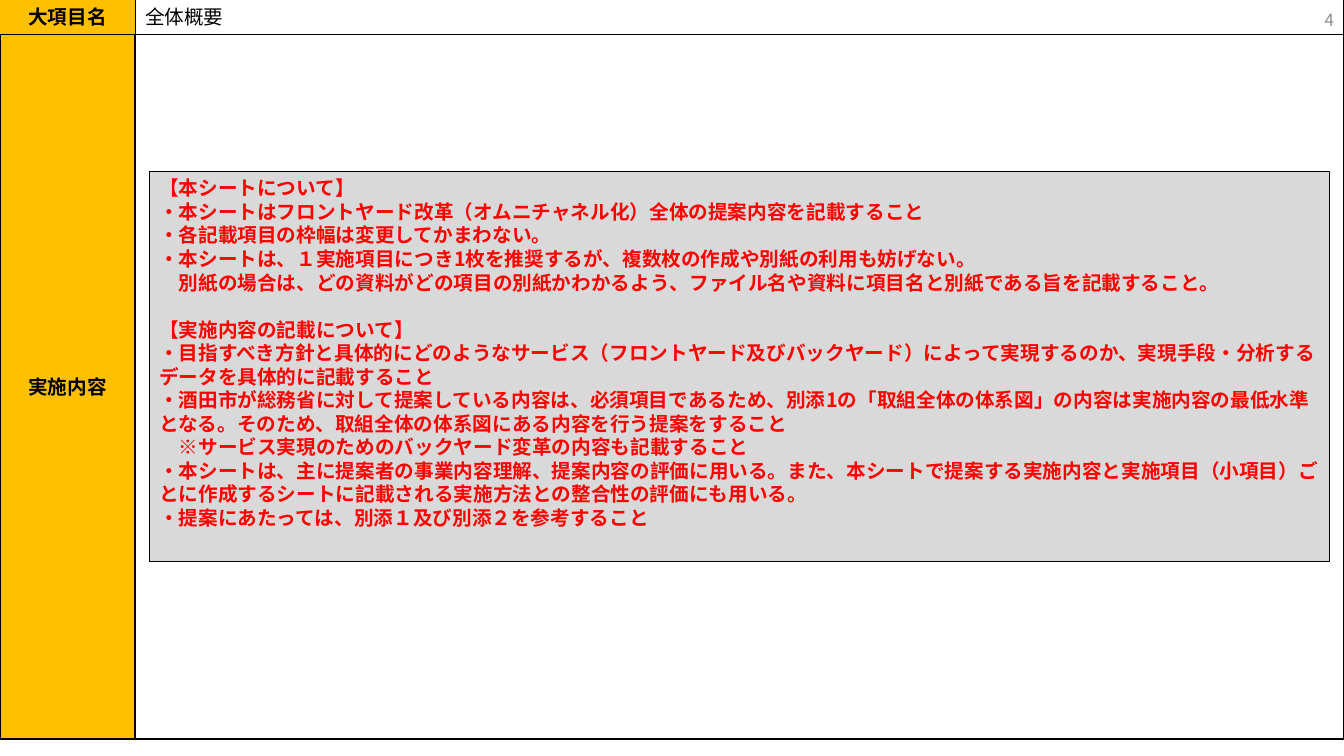
from pptx import Presentation
from pptx.dml.color import RGBColor
from pptx.enum.shapes import MSO_SHAPE
from pptx.enum.text import MSO_ANCHOR, PP_ALIGN
from pptx.oxml.ns import qn
from pptx.util import Inches, Pt

RECTANGLE = MSO_SHAPE.RECTANGLE
TOP, MIDDLE = MSO_ANCHOR.TOP, MSO_ANCHOR.MIDDLE
LEFT, CENTER, RIGHT = PP_ALIGN.LEFT, PP_ALIGN.CENTER, PP_ALIGN.RIGHT

BLACK = RGBColor(0x00, 0x00, 0x00)
AMBER = RGBColor(0xFF, 0xC0, 0x00)
PALE_GRAY = RGBColor(0xD9, 0xD9, 0xD9)
RED = RGBColor(0xFF, 0x00, 0x00)
PAGE_GRAY = RGBColor(0x8C, 0x8C, 0x8C)

FONT = "Noto Sans CJK JP"
WIDTH, HEIGHT = 13.33, 7.5
LABEL_WIDTH, HEADER_HEIGHT, BODY_HEIGHT = 1.34, 0.34, 6.99
NOTE_LINE = 16.8

SHEET_NOTES = [
    "【本シートについて】",
    "・本シートはフロントヤード改革（オムニチャネル化）全体の提案内容を記載すること",
    "・各記載項目の枠幅は変更してかまわない。",
    "・本シートは、１実施項目につき1枚を推奨するが、複数枚の作成や別紙の利用も妨げない。",
    "　別紙の場合は、どの資料がどの項目の別紙かわかるよう、ファイル名や資料に項目名と別紙である旨を記載すること。",
]
CONTENT_NOTES = [
    "【実施内容の記載について】",
    "・目指すべき方針と具体的にどのようなサービス（フロントヤード及びバックヤード）によって実現するのか、実現手段・分析する",
    "データを具体的に記載すること",
    "・酒田市が総務省に対して提案している内容は、必須項目であるため、別添1の「取組全体の体系図」の内容は実施内容の最低水準"
    "となる。そのため、取組全体の体系図にある内容を行う提案をすること",
    "　※サービス実現のためのバックヤード変革の内容も記載すること",
    "・本シートは、主に提案者の事業内容理解、提案内容の評価に用いる。また、本シートで提案する実施内容と実施項目（小項目）ご"
    "とに作成するシートに記載される実施方法との整合性の評価にも用いる。",
    "・提案にあたっては、別添１及び別添２を参考すること",
]


def write(frame, lines, color=BLACK, size=14, bold=False, align=LEFT, anchor=MIDDLE):
    """Write one paragraph per line and return the paragraphs."""
    frame.word_wrap = True
    frame.vertical_anchor = anchor
    frame.margin_top = frame.margin_bottom = Inches(0.05)
    for number, line in enumerate(lines):
        paragraph = frame.paragraphs[0] if number == 0 else frame.add_paragraph()
        paragraph.alignment = align
        run = paragraph.add_run()
        run.text = line
        for key, value in {"name": FONT, "size": Pt(size), "bold": bold}.items():
            setattr(run.font, key, value)
        run.font.color.rgb = color
        east_asian = run.font._element.makeelement(qn("a:ea"), {"typeface": FONT})
        run.font._element.append(east_asian)
    return frame.paragraphs


def add_cell(slide, box, fill=None, line_width=0.75):
    """Draw an outlined rectangle in the box and return its text frame."""
    cell = slide.shapes.add_shape(RECTANGLE, *map(Inches, box))
    cell.shadow.inherit = False
    if fill is None:
        cell.fill.background()
    else:
        cell.fill.solid()
        cell.fill.fore_color.rgb = fill
    cell.line.color.rgb = BLACK
    cell.line.width = Pt(line_width)
    return cell.text_frame


def add_row(slide, box, label, value, line_width):
    """Place an amber label cell and its value cell side by side."""
    left, top, width, height = box
    value_box = (left + LABEL_WIDTH, top, width - LABEL_WIDTH, height)
    value_frame = add_cell(slide, value_box, None, line_width)
    if value:
        write(value_frame, [value])
    label_frame = add_cell(slide, (left, top, LABEL_WIDTH, height), AMBER, line_width)
    write(label_frame, [label], bold=True, align=CENTER)


def add_guidance(slide, box):
    """Place the gray panel of red instructions."""
    frame = add_cell(slide, box, PALE_GRAY)
    paragraphs = write(frame, SHEET_NOTES + CONTENT_NOTES, RED, bold=True, anchor=TOP)
    for paragraph in paragraphs:
        paragraph.line_spacing = Pt(NOTE_LINE)
    paragraphs[len(SHEET_NOTES)].space_before = Pt(NOTE_LINE)


def add_page_number(slide, box, number):
    """Place the page number at the right of the box."""
    page = slide.shapes.add_textbox(*map(Inches, box))
    write(page.text_frame, [number], PAGE_GRAY, size=12, align=RIGHT)


def main():
    """Build the overview sheet and save it."""
    deck = Presentation()
    deck.slide_width, deck.slide_height = Inches(WIDTH), Inches(HEIGHT)
    slide = deck.slides.add_slide(deck.slide_layouts[6])
    add_row(slide, (0, HEADER_HEIGHT, WIDTH, BODY_HEIGHT), "実施内容", "", 1)
    add_row(slide, (0, 0, WIDTH, HEADER_HEIGHT), "大項目名", "全体概要", 0.75)
    add_guidance(slide, (1.48, 1.7, 11.71, 3.87))
    add_page_number(slide, (WIDTH - 3, 0, 3, 0.4), "4")
    deck.save("out.pptx")


if __name__ == "__main__":
    main()
